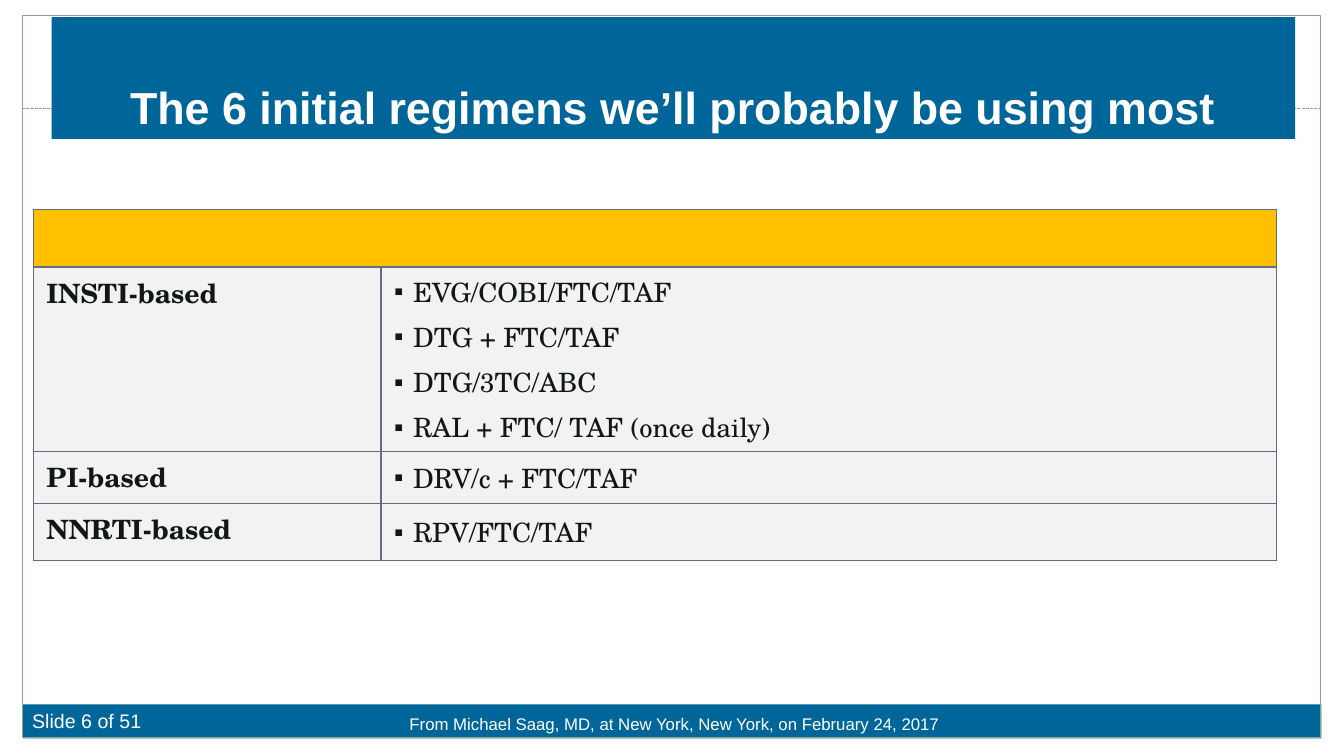
"""Build the slide listing the six most used initial regimens."""
import pptx
import pptx.dml.color
import pptx.enum.dml
import pptx.enum.shapes
import pptx.enum.text
import pptx.oxml
import pptx.oxml.ns
import pptx.util
from pptx.util import Cm, Pt

TITLE = "The 6 initial regimens we’ll probably be using most"
SLIDE_NUMBER = "Slide 6 of 51"
CREDIT = "From Michael Saag, MD, at New York, New York, on February 24, 2017"
REGIMENS = [
    ("INSTI-based", ["EVG/COBI/FTC/TAF", "DTG + FTC/TAF", "DTG/3TC/ABC",
                     "RAL + FTC/ TAF (once daily)"]),
    ("PI-based", ["DRV/c + FTC/TAF"]),
    ("NNRTI-based", ["RPV/FTC/TAF"]),
]
COLUMN_WIDTHS = [8.76, 22.58]
ROW_HEIGHTS = [1.45, 4.16, 1.3, 1.45]
BLUE, GOLD, GREY, INK, WHITE = "006699", "FFC000", "F2F2F2", "111618", "FFFFFF"
FRAME_GREEN, BORDER = "8DA68B", "646B86"
SANS, SERIF = "Arial", "TeX Gyre Schola"


def color(value):
    return pptx.dml.color.RGBColor.from_string(value)


def add_xml(parent, markup):
    tag, rest = markup.split(" ", 1)
    namespace = pptx.oxml.ns.nsdecls("a")
    parent.append(pptx.oxml.parse_xml(f"<a:{tag} {namespace} {rest}"))


def paint(target, value):
    target.fill.solid()
    target.fill.fore_color.rgb = color(value)


def format_text(para, size, font, value, bold=False):
    for span in para.runs:
        span.font.size = Pt(size)
        span.font.name = font
        span.font.bold = bold
        span.font.color.rgb = color(value)


def add_rectangle(page, *place):
    box = page.shapes.add_shape(pptx.enum.shapes.MSO_SHAPE.RECTANGLE, *map(Cm, place))
    box.shadow.inherit = False
    return box


def add_frame(page):
    bar = add_rectangle(page, 0.58, 17.75, 32.72, 0.86)
    paint(bar, BLUE)
    bar.line.fill.background()
    frame = add_rectangle(page, 0.56, 0.4, 32.72, 18.19)
    frame.fill.background()
    rule = page.shapes.add_connector(pptx.enum.shapes.MSO_CONNECTOR.STRAIGHT,
                                     Cm(0.56), Cm(2.74), Cm(33.28), Cm(2.74))
    add_xml(rule.element.spPr, "effectLst />")
    for outline in (frame.line, rule.line):
        outline.color.rgb = color(FRAME_GREEN)
        outline.width = Pt(0.75)
    rule.line.dash_style = pptx.enum.dml.MSO_LINE.SQUARE_DOT


def add_footer(page, text, size, *place):
    box = page.shapes.add_textbox(*map(Cm, place))
    box.text_frame.word_wrap = True
    box.text_frame.text = text
    format_text(box.text_frame.paragraphs[0], size, SANS, WHITE)


def add_title(page):
    title = page.shapes.title
    title.left, title.top, title.width, title.height = map(Cm, (1.3, 0.43, 31.34, 3.07))
    paint(title, BLUE)
    frame = title.text_frame
    frame.text = TITLE
    frame.auto_size = pptx.enum.text.MSO_AUTO_SIZE.NONE
    frame.vertical_anchor = pptx.enum.text.MSO_ANCHOR.BOTTOM
    frame.paragraphs[0].alignment = pptx.enum.text.PP_ALIGN.CENTER
    format_text(frame.paragraphs[0], 32, SANS, WHITE, True)
    title.element.getparent().append(title.element)


def style_cell(cell, value):
    cell.margin_left = cell.margin_right = Cm(0.33)
    cell.margin_top = cell.margin_bottom = Cm(0.13)
    properties = cell._tc.get_or_add_tcPr()
    for side in "LRTB":
        add_xml(properties, f'ln{side} w="12700"><a:solidFill><a:srgbClr val="{BORDER}"/>'
                            f'</a:solidFill></a:ln{side}>')
    paint(cell, value)


def fill_cell(cell, lines, bulleted):
    cell.text_frame.text = "\n".join(lines)
    for para in cell.text_frame.paragraphs:
        para.space_before = Pt(4.5)
        format_text(para, 19, SERIF, INK, not bulleted)
        if bulleted:
            properties = para._p.get_or_add_pPr()
            properties.set("marL", str(Cm(0.48)))
            properties.set("indent", str(-Cm(0.48)))
            add_xml(properties, f'buClr ><a:srgbClr val="{INK}"/></a:buClr>')
            add_xml(properties, f'buFont typeface="{SANS}"/>')
            add_xml(properties, 'buChar char="▪"/>')
    if bulleted:
        cell.vertical_anchor = pptx.enum.text.MSO_ANCHOR.MIDDLE


def add_regimens(page):
    table = page.shapes.add_table(
        len(ROW_HEIGHTS), len(COLUMN_WIDTHS), Cm(0.84), Cm(5.28),
        Cm(sum(COLUMN_WIDTHS)), Cm(sum(ROW_HEIGHTS))).table
    for column, width in zip(table.columns, COLUMN_WIDTHS):
        column.width = Cm(width)
    for index, height in enumerate(ROW_HEIGHTS):
        table.rows[index].height = Cm(height)
        for cell in table.rows[index].cells:
            style_cell(cell, GREY if index else GOLD)
    table.cell(0, 0).merge(table.cell(0, 1))
    for index, (family, drugs) in enumerate(REGIMENS, 1):
        fill_cell(table.cell(index, 0), [family], False)
        fill_cell(table.cell(index, 1), drugs, True)


def main():
    deck = pptx.Presentation()
    deck.slide_width, deck.slide_height = Cm(33.87), Cm(19.05)
    page = deck.slides.add_slide(deck.slide_layouts[5])
    add_frame(page)
    add_footer(page, SLIDE_NUMBER, 14, 0.56, 17.75, 5.64, 0.86)
    add_footer(page, CREDIT, 12, 10.07, 17.86, 13.87, 0.76)
    add_title(page)
    add_regimens(page)
    deck.save("out.pptx")


if __name__ == "__main__":
    main()
